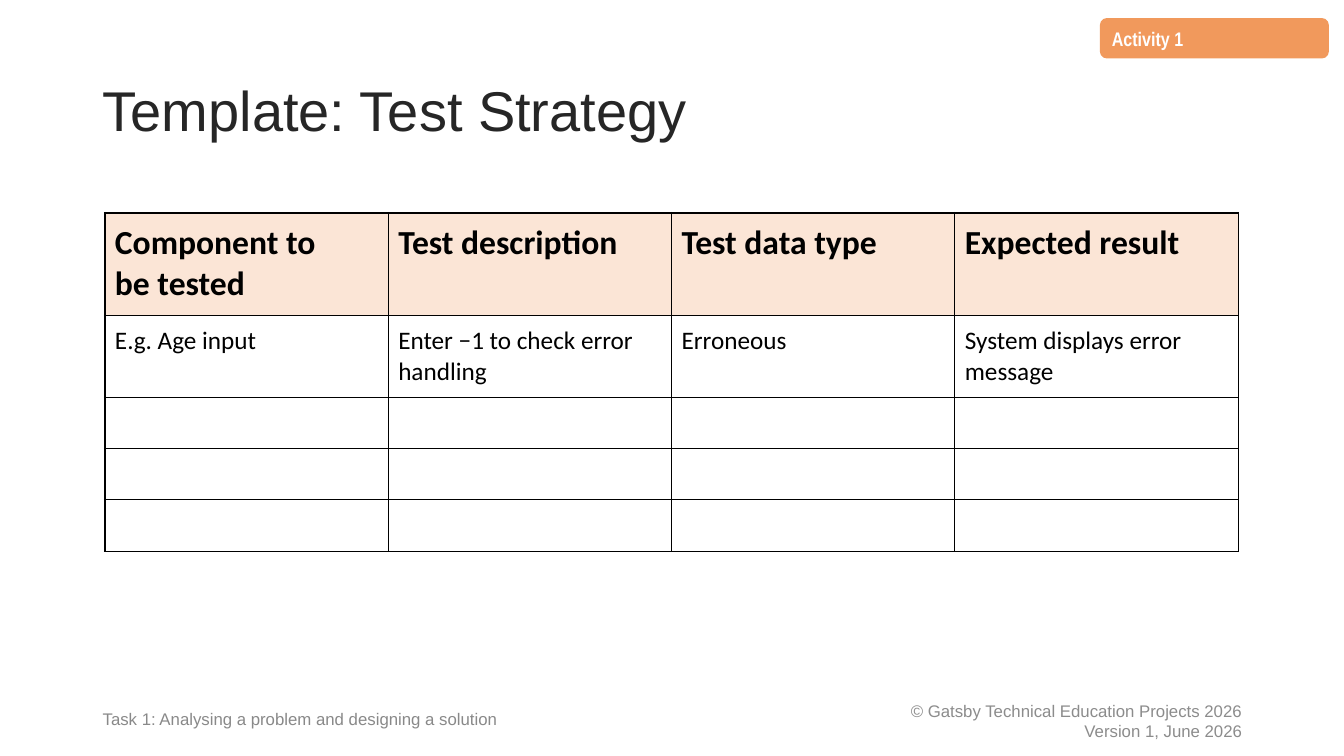
from lxml.etree import SubElement
from pptx import Presentation
from pptx.dml.color import RGBColor as RGB
from pptx.enum.shapes import MSO_SHAPE as SHAPE
from pptx.enum.text import MSO_ANCHOR as ANCHOR, PP_ALIGN as ALIGN
from pptx.oxml.ns import qn
from pptx.util import Inches, Pt

WHITE = RGB(0xFF, 0xFF, 0xFF)
BLACK = RGB(0, 0, 0)
ORANGE = RGB(0xF1, 0x99, 0x5C)
PEACH = RGB(0xFB, 0xE5, 0xD6)
TITLE_INK = RGB(0x26, 0x26, 0x26)
TASK_GREY = RGB(0x89, 0x89, 0x89)
COPYRIGHT_GREY = RGB(0x8C, 0x8C, 0x8C)

TITLE = dict(name="Arial", size=Pt(40), bold=False)
TAG = dict(name="Arial Narrow", size=Pt(14), bold=True)
FOOTER = dict(name="Arial", size=Pt(12))
HEADER = dict(name="Calibri", size=Pt(24), bold=True)
BODY = dict(name="Calibri", size=Pt(18), bold=False)

THIN, THICK = Pt(0.75), Pt(1.5)
ROW_HEIGHTS = [1.02, 0.8, 0.51, 0.51, 0.51]
ROWS = [
    ["Component to \vbe tested", "Test description", "Test data type", "Expected result"],
    ["E.g. Age input", "Enter −1 to check error handling", "Erroneous",
     "System displays error message"],
]


def write(tf, lines, style, color, **paragraph_format):
    """Fill a text frame with one paragraph per line."""
    for i, line in enumerate(lines):
        p = tf.paragraphs[0] if i == 0 else tf.add_paragraph()
        p.text = line
        for key, value in paragraph_format.items():
            setattr(p, key, value)
        for key, value in style.items():
            setattr(p.font, key, value)
        p.font.color.rgb = color


def add_title(s, left, top, width, height):
    sp = s.shapes.title
    sp.left, sp.top, sp.width, sp.height = map(Inches, (left, top, width, height))
    sp.text_frame.vertical_anchor = ANCHOR.MIDDLE
    write(sp.text_frame, ["Template: Test Strategy"], TITLE, TITLE_INK,
          alignment=ALIGN.LEFT, line_spacing=0.9)


def add_activity_tag(s, left, top, width, height):
    sp = s.shapes.add_shape(SHAPE.ROUNDED_RECTANGLE, *map(Inches, (left, top, width, height)))
    sp.shadow.inherit = False
    sp.fill.solid()
    sp.fill.fore_color.rgb = ORANGE
    sp.line.fill.background()
    sp.text_frame.vertical_anchor = ANCHOR.MIDDLE
    write(sp.text_frame, ["Activity 1"], TAG, WHITE, alignment=ALIGN.LEFT)


def add_footer(s, left, top, width, height, lines, color, **paragraph_format):
    tf = s.shapes.add_textbox(*map(Inches, (left, top, width, height))).text_frame
    tf.word_wrap = True
    tf.vertical_anchor = ANCHOR.MIDDLE
    write(tf, lines, FOOTER, color, **paragraph_format)


def set_borders(cell, widths):
    """Draw the cell's borders; they must precede its fill in the XML."""
    tc_pr = cell._tc.get_or_add_tcPr()
    for i, (side, width) in enumerate(widths.items()):
        ln = SubElement(tc_pr, qn(f"a:{side}"), w=str(width))
        fill = SubElement(ln, qn("a:solidFill"))
        SubElement(fill, qn("a:srgbClr"), val=str(BLACK))
        tc_pr.insert(i, ln)


def add_test_table(s, left, top, width):
    columns = len(ROWS[0])
    frame = s.shapes.add_table(len(ROW_HEIGHTS), columns,
                               *map(Inches, (left, top, width, sum(ROW_HEIGHTS))))
    table = frame.table
    table.horz_banding = False
    for column in table.columns:
        column.width = Inches(width / columns)
    for r, height in enumerate(ROW_HEIGHTS):
        table.rows[r].height = Inches(height)
        header = r == 0
        for c in range(columns):
            cell = table.cell(r, c)
            for side in ("left", "right", "top", "bottom"):
                setattr(cell, f"margin_{side}", Inches(0.1))
            set_borders(cell, {
                "lnL": THICK if c == 0 else THIN,
                "lnR": THIN,
                "lnT": THICK if r <= 1 else THIN,
                "lnB": THICK if header else THIN,
            })
            if header:
                cell.fill.solid()
                cell.fill.fore_color.rgb = PEACH
            else:
                cell.fill.background()
            if r < len(ROWS):
                write(cell.text_frame, [ROWS[r][c]], HEADER if header else BODY, BLACK)


def main():
    prs = Presentation()
    prs.slide_width, prs.slide_height = Inches(13.33), Inches(7.5)
    s = prs.slides.add_slide(prs.slide_layouts[5])

    # Heading
    add_activity_tag(s, 10.91, 0.18, 2.27, 0.4)
    add_title(s, 0.92, 0.4, 11.5, 1.45)

    # Test strategy
    add_test_table(s, 1.04, 2.11, 11.24)

    # Footers
    add_footer(s, 0.92, 6.95, 5.44, 0.34,
               ["Task 1: Analysing a problem and designing a solution"],
               TASK_GREY, line_spacing=1.08)
    add_footer(s, 7.92, 6.95, 4.5, 0.4,
               ["© Gatsby Technical Education Projects 2026", "Version 1, June 2026"],
               COPYRIGHT_GREY, alignment=ALIGN.RIGHT)

    prs.save("out.pptx")


if __name__ == "__main__":
    main()
